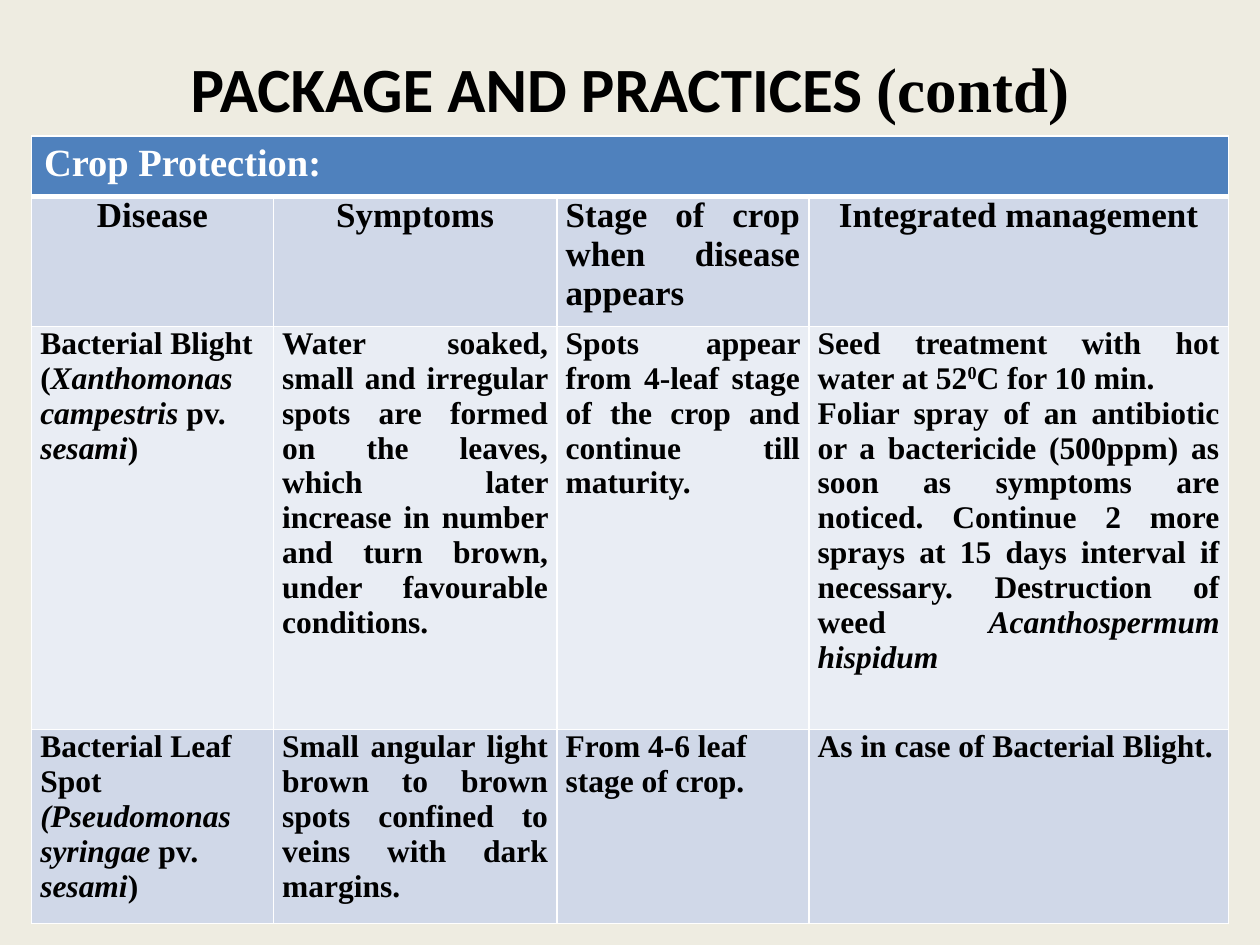
from lxml import etree
from pptx import Presentation
from pptx.dml.color import RGBColor
from pptx.enum import text
from pptx.oxml import ns
from pptx.util import Inches, Pt

BLACK = RGBColor(0x00, 0x00, 0x00)
WHITE = RGBColor(0xFF, 0xFF, 0xFF)
CREAM = RGBColor(0xEE, 0xEC, 0xE1)
BLUE = RGBColor(0x4F, 0x81, 0xBD)
DARK_BAND = RGBColor(0xD0, 0xD8, 0xE8)
LIGHT_BAND = RGBColor(0xE9, 0xED, 0xF4)
SERIF = "Times New Roman"
LEFT, CENTER, JUSTIFY = text.PP_ALIGN.LEFT, text.PP_ALIGN.CENTER, text.PP_ALIGN.JUSTIFY


def add_span(para, words, size, color=BLACK, font=SERIF, style=""):
    """Add one bold run; style is "", "italic" or "super"."""
    span = para.add_run()
    span.text = words
    span.font.name = font
    span.font.size = Pt(size)
    span.font.bold = True
    span.font.italic = style == "italic"
    span.font.color.rgb = color
    if style == "super":
        span.font._element.set("baseline", "30000")


def set_borders(cell, bottom_width=1):
    """Draw white borders; must run before the cell is filled."""
    properties = cell._tc.get_or_add_tcPr()
    for side, width in (("L", 1), ("R", 1), ("T", 1), ("B", bottom_width)):
        line = etree.SubElement(properties, ns.qn(f"a:ln{side}"), w=str(Pt(width)))
        fill = etree.SubElement(line, ns.qn("a:solidFill"))
        etree.SubElement(fill, ns.qn("a:srgbClr"), val=str(WHITE))


deck = Presentation()
deck.slide_width, deck.slide_height = Inches(10), Inches(7.5)
page = deck.slides.add_slide(deck.slide_layouts[6])
page.background.fill.solid()
page.background.fill.fore_color.rgb = CREAM

# Title
title = page.shapes.add_textbox(Inches(0.5), Inches(0.3), Inches(9), Inches(0.78))
title.text_frame.word_wrap = True
title.text_frame.vertical_anchor = text.MSO_ANCHOR.MIDDLE
para = title.text_frame.paragraphs[0]
para.alignment = CENTER
add_span(para, "PACKAGE AND PRACTICES ", 36, font="Calibri")
add_span(para, "(contd)", 36)

# Table frame
COLUMNS = (1.92, 2.25, 2, 3.33)
ROWS = (0.48, 1.03, 3.2, 1.54)
table = page.shapes.add_table(len(ROWS), len(COLUMNS), Inches(0.25), Inches(1.08),
                              Inches(9.5), Inches(6.25)).table
for column, width in zip(table.columns, COLUMNS):
    column.width = Inches(width)
for row, height in zip(table.rows, ROWS):
    row.height = Inches(height)

# Banner row
for cell in table.rows[0].cells:
    set_borders(cell, bottom_width=3)
    cell.fill.solid()
    cell.fill.fore_color.rgb = BLUE
banner = table.cell(0, 0)
banner.merge(table.cell(0, 3))
add_span(banner.text_frame.paragraphs[0], "Crop Protection:", 22, WHITE)

# Body rows: size, fill, then per cell an alignment and its paragraphs of (words, style)
BODY = [
    (20, DARK_BAND, [
        (CENTER, [[("Disease", "")]]),
        (CENTER, [[("Symptoms", "")]]),
        (JUSTIFY, [[("Stage of crop when disease appears", "")]]),
        (CENTER, [[("Integrated management", "")]]),
    ]),
    (18, LIGHT_BAND, [
        (LEFT, [[("Bacterial Blight  (", ""), ("Xanthomonas campestris ", "italic"),
                 ("pv. ", ""), ("sesami", "italic"), (")", "")]]),
        (JUSTIFY, [[("Water soaked, small and irregular spots are formed on the leaves, "
                     "which later increase in number and turn brown, under favourable "
                     "conditions. ", "")]]),
        (JUSTIFY, [[("Spots appear from 4-leaf stage of the crop and continue till "
                     "maturity.", "")]]),
        (JUSTIFY, [
            [("Seed treatment with hot water at 52", ""), ("0", "super"),
             ("C for 10 min.", "")],
            [("Foliar spray of an antibiotic or a bactericide (500ppm) as soon as symptoms "
              "are noticed. Continue 2 more sprays at 15 days interval if necessary. "
              "Destruction of weed ", ""), ("Acanthospermum hispidum", "italic")],
        ]),
    ]),
    (18, DARK_BAND, [
        (LEFT, [[("Bacterial Leaf Spot ", ""), ("(Pseudomonas syringae ", "italic"),
                 ("pv", ""), (". sesami", "italic"), (")", "")]]),
        (JUSTIFY, [[("Small angular light brown to brown spots confined to veins with dark "
                     "margins. ", "")]]),
        (LEFT, [[("From 4-6 leaf stage of crop.", "")]]),
        (JUSTIFY, [[("As in case of Bacterial Blight.", "")]]),
    ]),
]
for row_index, (size, fill, cells) in enumerate(BODY, start=1):
    for column_index, (alignment, paragraphs) in enumerate(cells):
        cell = table.cell(row_index, column_index)
        set_borders(cell)
        cell.fill.solid()
        cell.fill.fore_color.rgb = fill
        cell.margin_left = cell.margin_right = Inches(0.07)
        cell.margin_top = cell.margin_bottom = 0
        frame = cell.text_frame
        for index, spans in enumerate(paragraphs):
            para = frame.add_paragraph() if index else frame.paragraphs[0]
            para.alignment = alignment
            for words, style in spans:
                add_span(para, words, size, style=style)

deck.save("out.pptx")
